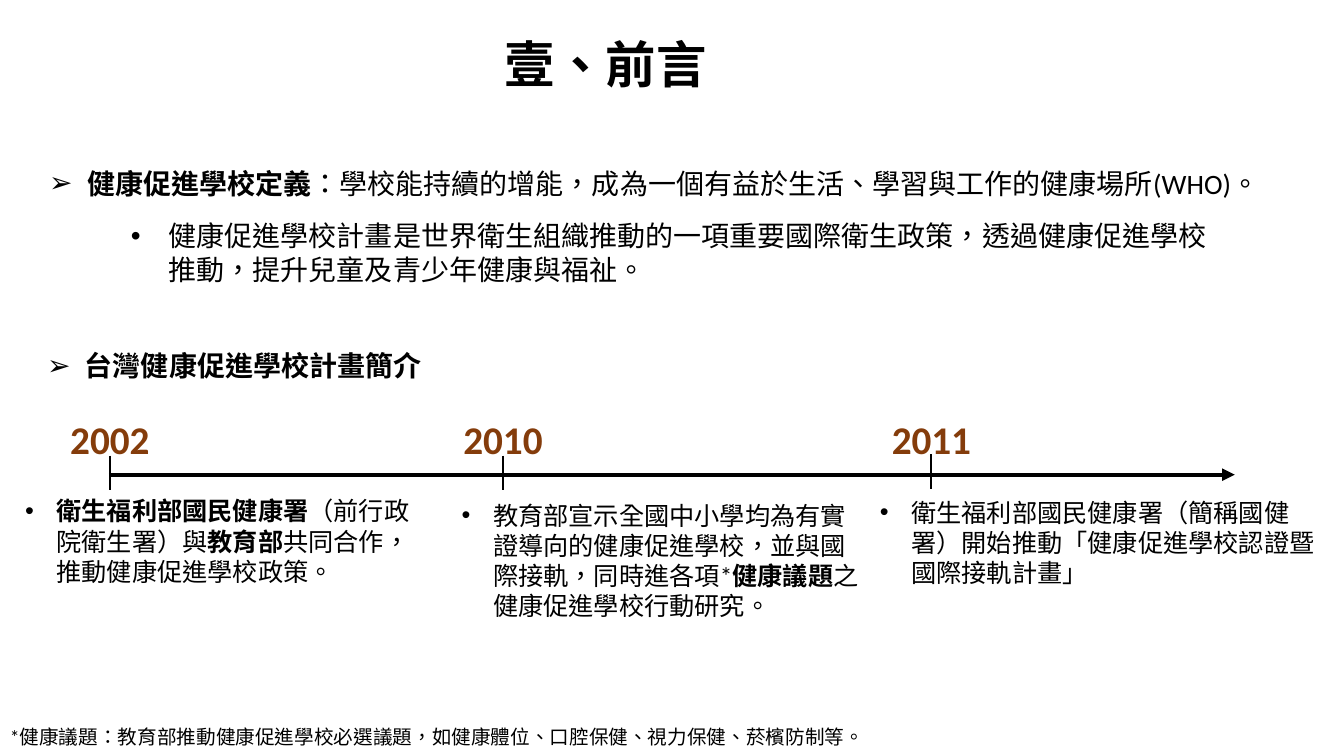
"""Builds the preface slide on health promoting schools with a three-step timeline."""
from lxml.etree import SubElement
from pptx import Presentation
from pptx.dml.color import RGBColor
from pptx.enum.shapes import MSO_CONNECTOR
from pptx.enum.text import MSO_AUTO_SIZE as AutoSize, PP_ALIGN as Align
from pptx.oxml.ns import qn
from pptx.util import Pt


def add_text(box, *runs, size=20, font="Calibri", color="000000", bold=False,
             align=Align.LEFT, bullet=None, indent=27, spacing=None, grow=True):
    """Adds a text box; each run is a string, or a one-item tuple for bold."""
    frame = slide.shapes.add_textbox(*map(Pt, box)).text_frame
    frame.word_wrap = True
    frame.auto_size = AutoSize.SHAPE_TO_FIT_TEXT if grow else AutoSize.NONE
    paragraph = frame.paragraphs[0]
    paragraph.alignment = align
    if spacing:
        paragraph.line_spacing = spacing
    if bullet:
        properties = paragraph._p.get_or_add_pPr()
        properties.set("marL", str(Pt(indent)))
        properties.set("indent", str(-Pt(indent)))
        SubElement(properties, qn("a:buFont"), typeface="Arial")
        SubElement(properties, qn("a:buChar"), char=bullet)
    for part in runs:
        run = paragraph.add_run()
        run.text = part[0] if isinstance(part, tuple) else part
        run.font.size = Pt(size)
        run.font.name = font
        run.font.bold = bold or isinstance(part, tuple)
        run.font.color.rgb = RGBColor.from_string(color)
        run._r.get_or_add_rPr().set("lang", "zh-TW")


def add_line(start_x, start_y, end_x, end_y, width, arrow=False):
    """Adds a black straight line, with an arrowhead at its end if asked."""
    line = slide.shapes.add_connector(
        MSO_CONNECTOR.STRAIGHT, Pt(start_x), Pt(start_y), Pt(end_x), Pt(end_y))
    line.line.color.rgb = RGBColor.from_string("000000")
    line.line.width = Pt(width)
    if arrow:
        SubElement(line.line._get_or_add_ln(), qn("a:tailEnd"), type="triangle")
    SubElement(line._element.spPr, qn("a:effectLst"))


presentation = Presentation()
presentation.slide_width, presentation.slide_height = Pt(960), Pt(540)
slide = presentation.slides.add_slide(presentation.slide_layouts[6])

add_text((18.7, 25.2, 828, 88.6), "壹、前言", size=36, font="Noto Sans CJK SC",
         bold=True, align=Align.CENTER, spacing=0.9, grow=False)

add_text((28.1, 115.2, 903.6, 31.5), ("健康促進學校定義",),
         "：學校能持續的增能，成為一個有益於生活、學習與工作的健康場所(WHO)。", bullet="➢")
add_text((86.4, 152.6, 795.6, 55.7),
         "健康促進學校計畫是世界衛生組織推動的一項重要國際衛生政策，"
         "透過健康促進學校推動，提升兒童及青少年健康與福祉。", bullet="•")
add_text((26.6, 245.5, 302.4, 31.5), ("台灣健康促進學校計畫簡介",), bullet="➢")

milestones = [
    ("2002", 78.5, 325.4, (10.8, 350.6, 302.4, 72.7),
     [("衛生福利部國民健康署",), "（前行政院衛生署）與", ("教育部",),
      "共同合作，推動健康促進學校政策。"]),
    ("2010", 359.3, 325.4, (322.6, 353.5, 301.7, 94.3),
     ["教育部宣示全國中小學均為有實證導向的健康促進學校，並與國際接軌，同時進各項*",
      ("健康議題",), "之健康促進學校行動研究。"]),
    ("2011", 665.3, 324.4, (621.4, 351.4, 340.6, 72.7),
     ["衛生福利部國民健康署（簡稱國健署）開始推動「健康促進學校認證暨國際接軌計畫」"]),
]
add_line(77.8, 339.1, 882, 339.1, 3, arrow=True)
for year, center, tick_top, box, runs in milestones:
    add_text((center - 41, 293, 82, 41), year, size=28, color="843C0B",
             bold=True, align=Align.CENTER)
    add_line(center, tick_top, center, tick_top + 24.8, 1.5)
    add_text(box, *runs, size=18, bullet="•", indent=22.5)

add_text((0, 514.1, 657.4, 24.5),
         "*健康議題：教育部推動健康促進學校必選議題，"
         "如健康體位、口腔保健、視力保健、菸檳防制等。", size=14)

presentation.save("out.pptx")
